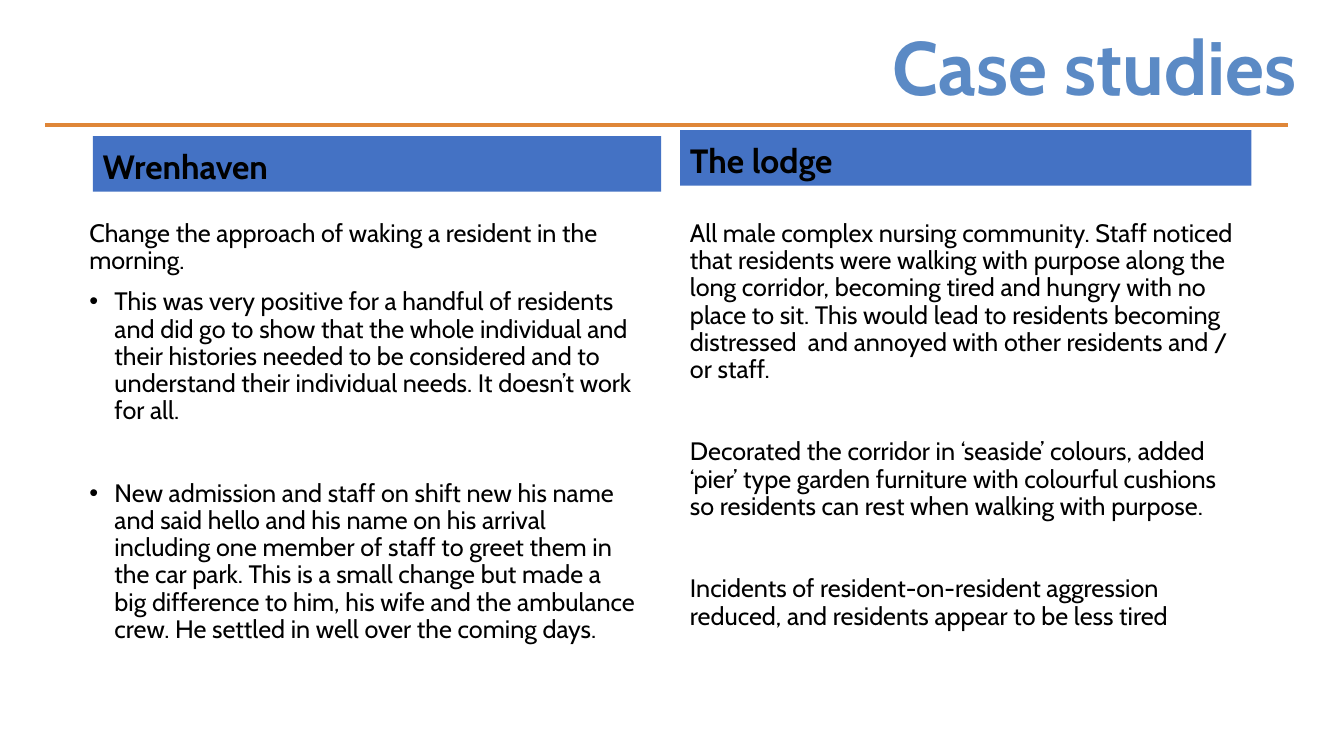
import pptx
import pptx.dml.color
import pptx.enum.shapes
import pptx.enum.text
import pptx.oxml
import pptx.util

Pt = pptx.util.Pt
RGBColor = pptx.dml.color.RGBColor
Align = pptx.enum.text.PP_ALIGN
Anchor = pptx.enum.text.MSO_ANCHOR

BLACK = RGBColor(0x00, 0x00, 0x00)
BANNER_BLUE = RGBColor(0x44, 0x72, 0xC4)
TITLE_BLUE = RGBColor(0x5B, 0x8A, 0xC5)
ORANGE = RGBColor(0xDF, 0x86, 0x38)
FONT = "Cabin"
BULLET_INDENT = Pt(18)
NEAR, FAR = 10, 39.4  # space before a paragraph, in points

# Each study: heading, banner left / top, body left, column width,
# then paragraphs as (text, bulleted, space before)
STUDIES = [
    ("Wrenhaven", 66.3, 97.2, 56.7, 406, [
        ("Change the approach of waking a resident in the morning.", False, 0),
        ("This was very positive for a handful of residents and did go to show that "
         "the whole individual and their histories needed to be considered and to "
         "understand their individual needs. It doesn’t work for all.", True, NEAR),
        ("New admission and staff on shift new his name and said hello and his name "
         "on his arrival including one member of staff to greet them in the car park. "
         "This is a small change but made a big difference to him, his wife and the "
         "ambulance crew. He settled in well over the coming days.", True, FAR),
    ]),
    ("The lodge", 485.8, 92.9, 485.8, 408.2, [
        ("All male complex nursing community. Staff noticed that residents were "
         "walking with purpose along the long corridor, becoming tired and hungry "
         "with no place to sit. This would lead to residents becoming distressed  and "
         "annoyed with other residents and / or staff.", False, 0),
        ("Decorated the corridor in ‘seaside’ colours, added ‘pier’ type garden "
         "furniture with colourful cushions so residents can rest when walking with "
         "purpose.", False, FAR),
        ("Incidents of resident-on-resident aggression reduced, and residents appear "
         "to be less tired", False, FAR),
    ]),
]


def write(paragraph, text, size, color=BLACK, bold=False, align=Align.LEFT):
    paragraph.text = text
    paragraph.alignment = align
    paragraph.line_spacing = 0.9
    font = paragraph.runs[0].font
    font.name, font.size, font.bold = FONT, Pt(size), bold
    font.color.rgb = color


def add_bullet(paragraph):
    properties = paragraph._p.get_or_add_pPr()
    properties.set("marL", str(BULLET_INDENT))
    properties.set("indent", str(-BULLET_INDENT))
    for tag, attribute, value in (("buFont", "typeface", "Arial"), ("buChar", "char", "•")):
        properties.append(pptx.oxml.parse_xml(
            f'<a:{tag} xmlns:a="http://schemas.openxmlformats.org/drawingml/2006/main" '
            f'{attribute}="{value}"/>'))


deck = pptx.Presentation()
deck.slide_width, deck.slide_height = Pt(960), Pt(540)
slide = deck.slides.add_slide(deck.slide_layouts[6])

rule = slide.shapes.add_connector(
    pptx.enum.shapes.MSO_CONNECTOR.STRAIGHT, Pt(32.4), Pt(89.3), Pt(920.2), Pt(89.3))
rule.line.color.rgb = ORANGE
rule.line.width = Pt(2.25)
rule._element.spPr.append(pptx.oxml.parse_xml(
    '<a:effectLst xmlns:a="http://schemas.openxmlformats.org/drawingml/2006/main"/>'))

title = slide.shapes.add_textbox(Pt(599), Pt(18), Pt(334), Pt(43.2))
title.text_frame.word_wrap = True
write(title.text_frame.paragraphs[0], "Case studies", 54, TITLE_BLUE, True, Align.RIGHT)

for heading, banner_left, banner_top, body_left, width, paragraphs in STUDIES:
    banner = slide.shapes.add_shape(
        pptx.enum.shapes.MSO_SHAPE.RECTANGLE,
        Pt(banner_left), Pt(banner_top), Pt(width), Pt(39.8))
    banner.shadow.inherit = False
    banner.fill.solid()
    banner.fill.fore_color.rgb = BANNER_BLUE
    banner.line.fill.background()
    banner.text_frame.word_wrap = True
    banner.text_frame.vertical_anchor = Anchor.BOTTOM
    write(banner.text_frame.paragraphs[0], heading, 24, bold=True)

    body = slide.shapes.add_textbox(Pt(body_left), Pt(154.1), Pt(width), Pt(323.3))
    frame = body.text_frame
    frame.word_wrap = True
    for index, (text, bulleted, gap) in enumerate(paragraphs):
        paragraph = frame.add_paragraph() if index else frame.paragraphs[0]
        write(paragraph, text, 18)
        paragraph.space_before = Pt(gap)
        if bulleted:
            add_bullet(paragraph)

deck.save("out.pptx")
